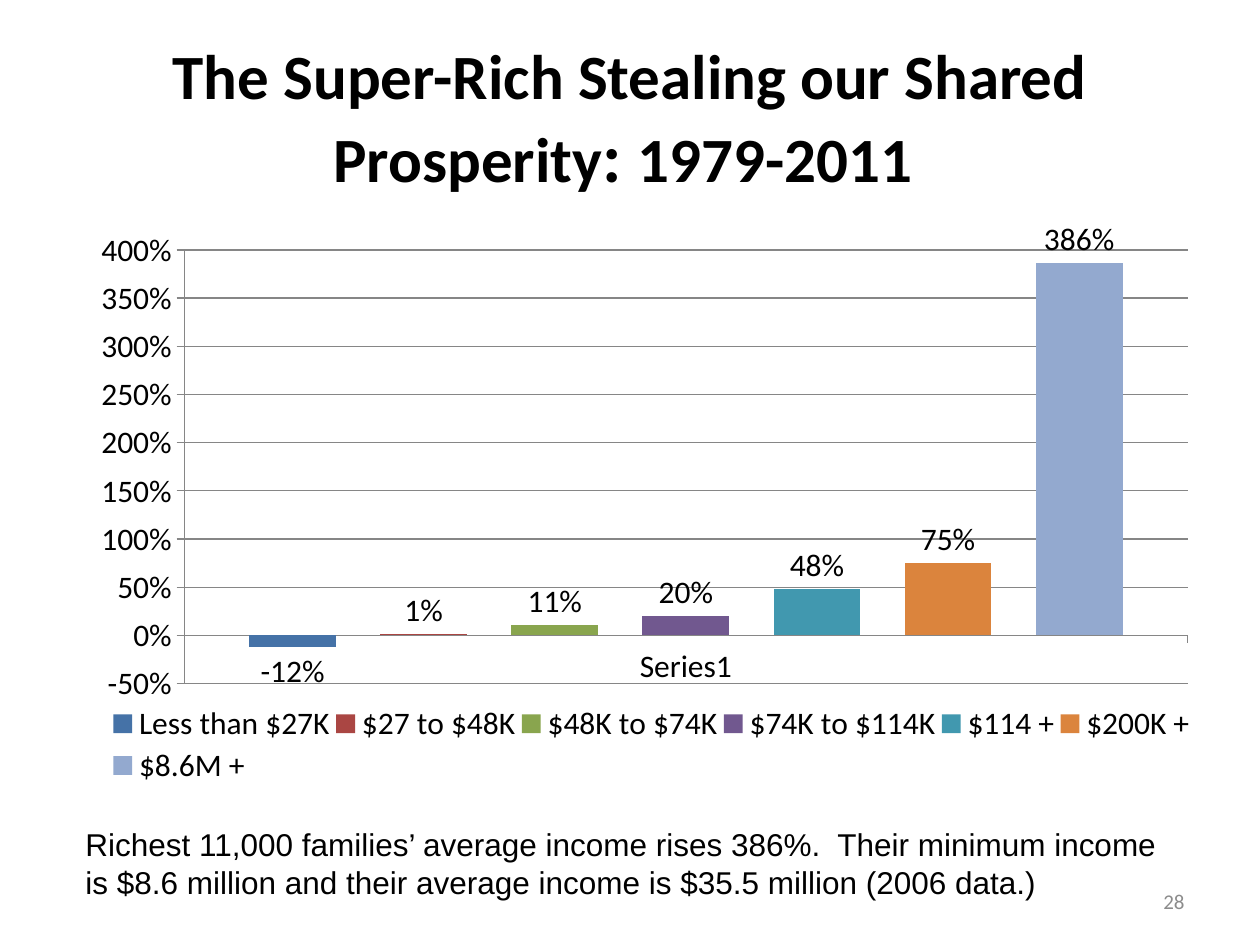
from lxml import etree
from pptx import Presentation
from pptx.chart import data
from pptx.dml.color import RGBColor
from pptx.enum import chart as charts, text
from pptx.oxml import ns
from pptx.util import Inches, Pt

BLACK = RGBColor(0, 0, 0)
GRAY = RGBColor(0x8C, 0x8C, 0x8C)
AXIS_GRAY = RGBColor(0x86, 0x86, 0x86)
INCOME_GROWTH = [
    ("Less than $27K", -0.12, RGBColor(0x45, 0x72, 0xA7)),
    ("$27 to $48K", 0.01, RGBColor(0xAA, 0x46, 0x43)),
    ("$48K to $74K", 0.11, RGBColor(0x89, 0xA5, 0x4E)),
    ("$74K to $114K", 0.2, RGBColor(0x71, 0x58, 0x8F)),
    ("$114 +", 0.48, RGBColor(0x41, 0x98, 0xAF)),
    ("$200K +", 0.75, RGBColor(0xDB, 0x84, 0x3D)),
    ("$8.6M + ", 3.86, RGBColor(0x93, 0xA9, 0xCF)),
]
PLOT_AREA = {"layoutTarget": "inner", "xMode": "edge", "yMode": "edge",
             "x": 0.098, "y": 0.045, "w": 0.885, "h": 0.697}
LEGEND_AREA = {"xMode": "edge", "yMode": "edge",
               "x": 0.03, "y": 0.77, "w": 0.96, "h": 0.14}


def set_attributes(target, values):
    """Set each named attribute of the target."""
    for name, value in values.items():
        setattr(target, name, value)


def set_font(font, size, name="Calibri", color=BLACK, bold=False):
    """Give a font its size, typeface, colour and weight."""
    set_attributes(font, {"size": Pt(size), "name": name, "bold": bold})
    font.color.rgb = color


def add_text(slide, box, runs, align, anchor, **style):
    """Place one wrapped paragraph made of (wording, size) runs."""
    frame = slide.shapes.add_textbox(*map(Inches, box)).text_frame
    set_attributes(frame, {"word_wrap": True, "vertical_anchor": anchor})
    paragraph = frame.paragraphs[0]
    paragraph.alignment = align
    for wording, size in runs:
        run = paragraph.add_run()
        run.text = wording
        set_font(run.font, size, **style)


def set_layout(element, position, settings):
    """Fix a chart part by fractions of the chart, as the child at the position."""
    for old in element.findall(ns.qn("c:layout")):
        element.remove(old)
    layout = etree.Element(ns.qn("c:layout"))
    manual = etree.SubElement(layout, ns.qn("c:manualLayout"))
    for name, value in settings.items():
        etree.SubElement(manual, ns.qn(f"c:{name}"), val=str(value))
    element.insert(position, layout)


def add_growth_chart(slide, box):
    """Place the column chart of income growth by income group."""
    chart_data = data.CategoryChartData(number_format="0%")
    chart_data.categories = ["Series1"]
    for name, value, _ in INCOME_GROWTH:
        chart_data.add_series(name, [value])
    chart = slide.shapes.add_chart(
        charts.XL_CHART_TYPE.COLUMN_CLUSTERED, *map(Inches, box), chart_data
    ).chart
    set_attributes(chart, {"has_title": False, "has_legend": True})
    set_font(chart.font, 18)
    set_attributes(chart.legend, {
        "position": charts.XL_LEGEND_POSITION.BOTTOM, "include_in_layout": False,
    })
    plot = chart.plots[0]
    set_attributes(plot, {"gap_width": 150, "overlap": -51, "vary_by_categories": False})
    for series, (_, _, color) in zip(plot.series, INCOME_GROWTH):
        series.invert_if_negative = False
        series.format.fill.solid()
        series.format.fill.fore_color.rgb = color
        set_attributes(series.data_labels, {
            "show_value": True, "number_format": "0%", "number_format_is_linked": False,
            "position": charts.XL_LABEL_POSITION.OUTSIDE_END,
        })
    value_axis = chart.value_axis
    set_attributes(value_axis, {
        "minimum_scale": -0.5, "maximum_scale": 4, "major_unit": 0.5,
        "has_major_gridlines": True,
    })
    set_attributes(value_axis.tick_labels, {
        "number_format": "0%", "number_format_is_linked": False,
    })
    for axis in (chart.category_axis, value_axis):
        axis.major_tick_mark = charts.XL_TICK_MARK.OUTSIDE
    for lined in (chart.category_axis, value_axis, value_axis.major_gridlines):
        lined.format.line.color.rgb = AXIS_GRAY
        lined.format.line.width = Pt(0.75)
    set_layout(plot._element.getparent(), 0, PLOT_AREA)
    set_layout(chart.legend._element, 1, LEGEND_AREA)


def build_slide(presentation):
    """Place the title, chart, page number and caption."""
    slide = presentation.slides.add_slide(presentation.slide_layouts[6])
    align, anchor = text.PP_ALIGN, text.MSO_ANCHOR
    title = [
        ("The Super-Rich Stealing our Shared Prosperity", 36),
        (": ", 40),
        ("1979-2011 ", 36),
    ]
    caption = (
        "Richest 11,000 families’ average income rises 386%.  Their minimum income "
        "is $8.6 million and their average income is $35.5 million (2006 data.)"
    )
    add_text(slide, (0.5, 0.3, 9, 1.25), title, align.CENTER, anchor.MIDDLE, bold=True)
    add_growth_chart(slide, (0.58, 1.75, 9, 4.95))
    add_text(slide, (7.17, 6.95, 2.33, 0.4), [("28", 12)], align.RIGHT, anchor.MIDDLE, color=GRAY)
    add_text(slide, (0.58, 6.5, 8.83, 0.71), [(caption, 18)], align.LEFT, anchor.TOP, name="Arial")


def main():
    """Build and save the presentation."""
    presentation = Presentation()
    set_attributes(presentation, {"slide_width": Inches(10), "slide_height": Inches(7.5)})
    build_slide(presentation)
    presentation.save("out.pptx")


if __name__ == "__main__":
    main()
